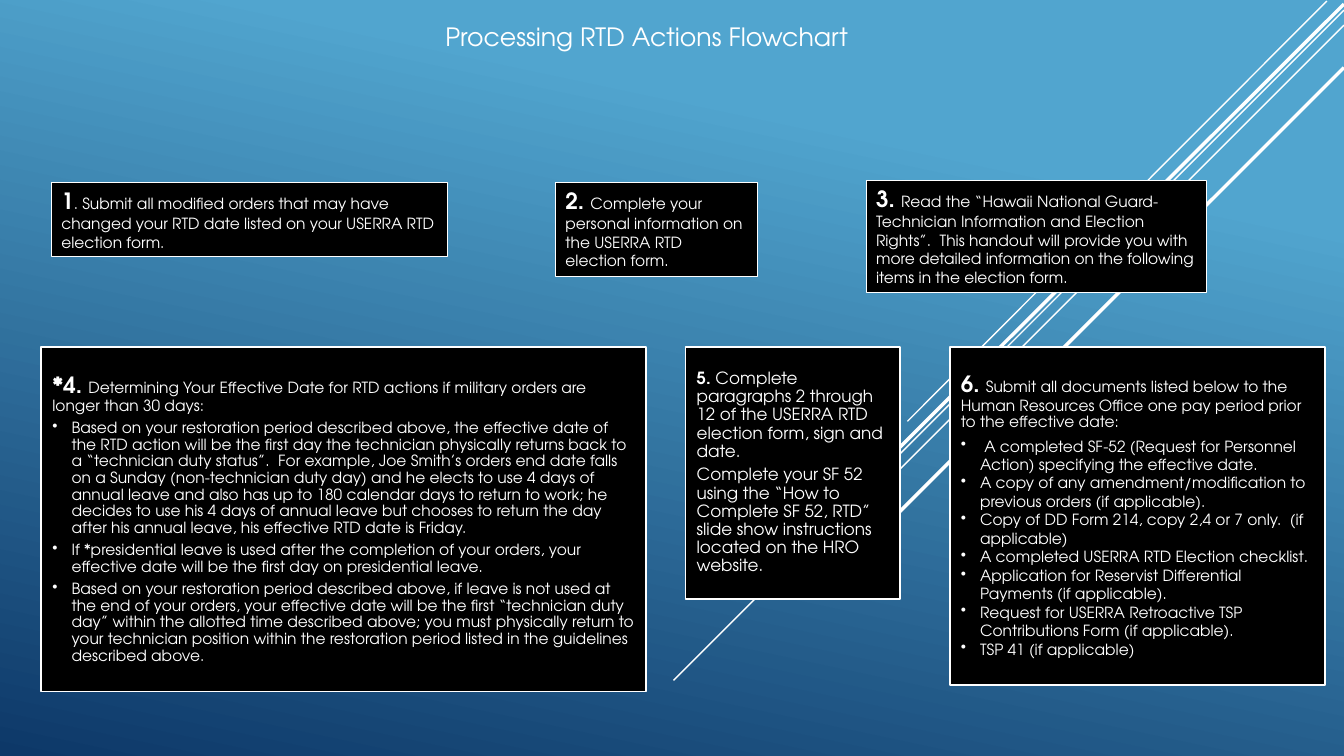
from lxml.etree import SubElement
from pptx import Presentation
from pptx.dml.color import RGBColor
from pptx.enum.shapes import MSO_CONNECTOR as Connector, MSO_SHAPE as Shape
from pptx.enum.text import MSO_ANCHOR as Anchor, MSO_AUTO_SIZE as AutoSize, PP_ALIGN as Align
from pptx.oxml.ns import qn
from pptx.util import Emu, Pt

WHITE = RGBColor(0xFF, 0xFF, 0xFF)
BLACK = RGBColor(0x00, 0x00, 0x00)
SKY = RGBColor(0x51, 0xA5, 0xCF)
NAVY = RGBColor(0x0D, 0x38, 0x68)
FONT = "TeX Gyre Adventor"
EMU_PER_PX = 9144
MARGINS = ("margin_left", "margin_top", "margin_right", "margin_bottom")

STRIPES = [
    (1316, 1, 900, 418, 1),
    (1333, 10, 668, 675, 1),
    (1333, 25, 791, 567, 1),
    (1333, 4, 802, 534, 2.5),
    (1333, 67, 858, 542, 2.5),
]
NOTES = [
    ((51, 181, 393, 74), "1",
     ". Submit all modified orders that may have changed your RTD date listed on your USERRA RTD "
     "election form."),
    ((551, 181, 200, 93), "2. ",
     "Complete your personal information on the USERRA RTD election form."),
    ((859, 179, 338, 111), "3. ",
     "Read the “Hawaii National Guard-Technician Information and Election Rights”.  This handout "
     "will provide you with more detailed information on the following items in the election form."),
]
EFFECTIVE_DATE = "Determining Your Effective Date for RTD actions if military orders are longer than 30 days:"
DATE_RULES = [
    "Based on your restoration period described above, the effective date of the RTD action will be "
    "the first day the technician physically returns back to a “technician duty status”.  For example, "
    "Joe Smith’s orders end date falls on a Sunday (non-technician duty day) and he elects to use "
    "4 days of annual leave and also has up to 180 calendar days to return to work; he decides to use "
    "his 4 days of annual leave but chooses to return the day after his annual leave, his effective "
    "RTD date is Friday.",
    "If *presidential leave is used after the completion of your orders, your effective date will be "
    "the first day on presidential leave.",
    "Based on your restoration period described above, if leave is not used at the end of your orders, "
    "your effective date will be the first “technician duty day” within the allotted time described "
    "above; you must physically return to your technician position within the restoration period "
    "listed in the guidelines described above.",
]
ELECTION_FORM = "Complete paragraphs 2 through 12 of the USERRA RTD election form, sign and date."
SF_52 = ("Complete your SF 52 using the “How to Complete SF 52, RTD” slide show instructions located "
         "on the HRO website.")
SUBMISSION = ("Submit all documents listed below to the Human Resources Office one pay period prior "
              "to the effective date:")
DOCUMENTS = [
    " A completed SF-52 (Request for Personnel Action) specifying the effective date.",
    "A copy of any amendment/modification to previous orders (if applicable).",
    "Copy of DD Form 214, copy 2,4 or 7 only.  (if applicable)",
    "A completed USERRA RTD Election checklist.",
    "Application for Reservist Differential Payments (if applicable).",
    "Request for USERRA Retroactive TSP Contributions Form (if applicable).",
    "TSP 41 (if applicable)",
]
TIGHT = {"line_spacing": 0.9, "space_after": Pt(4)}


def px(length):
    """Turn whole px into EMU."""
    return Emu(length * EMU_PER_PX)


def apply(target, values):
    """Set each named attribute on the target."""
    for name, value in values.items():
        setattr(target, name, value)


class FlowchartSlide:
    """Hold the style and the current slide, and draw its elements."""

    def __init__(self, presentation):
        """Add a blank slide with the gradient background."""
        self.slide = presentation.slides.add_slide(presentation.slide_layouts[6])
        self.shapes = self.slide.shapes
        fill = self.slide.background.fill
        fill.gradient()
        fill.gradient_angle = 258
        for stop, position, color in zip(fill.gradient_stops, (0.22, 1), (SKY, NAVY)):
            stop.position = position
            stop.color.rgb = color

    def stripe(self, x1, y1, x2, y2, width):
        """Draw one diagonal white line."""
        line = self.shapes.add_connector(Connector.STRAIGHT, px(x1), px(y1), px(x2), px(y2))
        apply(line.line, {"width": Pt(width)})
        line.line.color.rgb = WHITE
        SubElement(line._element.spPr, qn("a:effectLst"))

    def run(self, paragraph, text, size, bold=False):
        """Add one white run."""
        run = paragraph.add_run()
        run.text = text
        apply(run.font, {"name": FONT, "size": Pt(size), "bold": bold})
        run.font.color.rgb = WHITE

    def title(self, place, text):
        """Add the centred title."""
        frame = self.shapes.add_textbox(*map(px, place)).text_frame
        apply(frame, {"word_wrap": True, "auto_size": AutoSize.SHAPE_TO_FIT_TEXT})
        paragraph = frame.paragraphs[0]
        paragraph.alignment = Align.CENTER
        self.run(paragraph, text, 18)

    def box(self, place, line_width, frame_format):
        """Add a black box and return its text frame."""
        shape = self.shapes.add_shape(Shape.RECTANGLE, *map(px, place))
        shape.shadow.inherit = False
        shape.fill.solid()
        shape.fill.fore_color.rgb = BLACK
        shape.line.color.rgb = WHITE
        shape.line.width = Pt(line_width)
        apply(shape.text_frame, {"word_wrap": True, **frame_format})
        return shape.text_frame

    def lead(self, frame, number, text, number_size, size, spacing):
        """Fill the first paragraph with a bold number and its text."""
        paragraph = frame.paragraphs[0]
        apply(paragraph, {"alignment": Align.LEFT, **spacing})
        self.run(paragraph, number, number_size, True)
        self.run(paragraph, text, size)

    def note(self, place, number, text):
        """Add a short numbered step."""
        frame = self.box(place, 0.75, {"vertical_anchor": Anchor.TOP,
                                       "auto_size": AutoSize.SHAPE_TO_FIT_TEXT})
        self.lead(frame, number, text, 16, 11, {})

    def panel(self, place, number, text, others, sizes=(16, 11), spacing=TIGHT, bullets=True):
        """Add a long numbered step with further paragraphs."""
        frame = self.box(place, 1.25, {"vertical_anchor": Anchor.MIDDLE,
                                       **dict.fromkeys(MARGINS, px(11))})
        self.lead(frame, number, text, *sizes, TIGHT)
        for other in others:
            paragraph = frame.add_paragraph()
            apply(paragraph, {"alignment": Align.LEFT, **spacing})
            self.run(paragraph, other, sizes[1])
            if bullets:
                self.bullet(paragraph)

    def bullet(self, paragraph):
        """Give a paragraph a hanging bullet."""
        properties = paragraph._p.get_or_add_pPr()
        properties.set("marL", str(px(19)))
        properties.set("indent", str(-px(19)))
        SubElement(properties, qn("a:buChar"), char="•")


def main():
    """Build and save the slide."""
    presentation = Presentation()
    apply(presentation, {"slide_width": px(1333), "slide_height": px(750)})
    flowchart = FlowchartSlide(presentation)
    for stripe in STRIPES:
        flowchart.stripe(*stripe)
    flowchart.title((280, 16, 723, 40), "Processing RTD Actions Flowchart")
    for note in NOTES:
        flowchart.note(*note)
    flowchart.panel((41, 344, 600, 342), "*4. ", EFFECTIVE_DATE, DATE_RULES)
    flowchart.panel((680, 344, 213, 250), "5. ", ELECTION_FORM, [SF_52], sizes=(12, 12), bullets=False)
    flowchart.panel((942, 344, 372, 336), "6. ", SUBMISSION, DOCUMENTS, spacing={})
    presentation.save("out.pptx")


if __name__ == "__main__":
    main()
